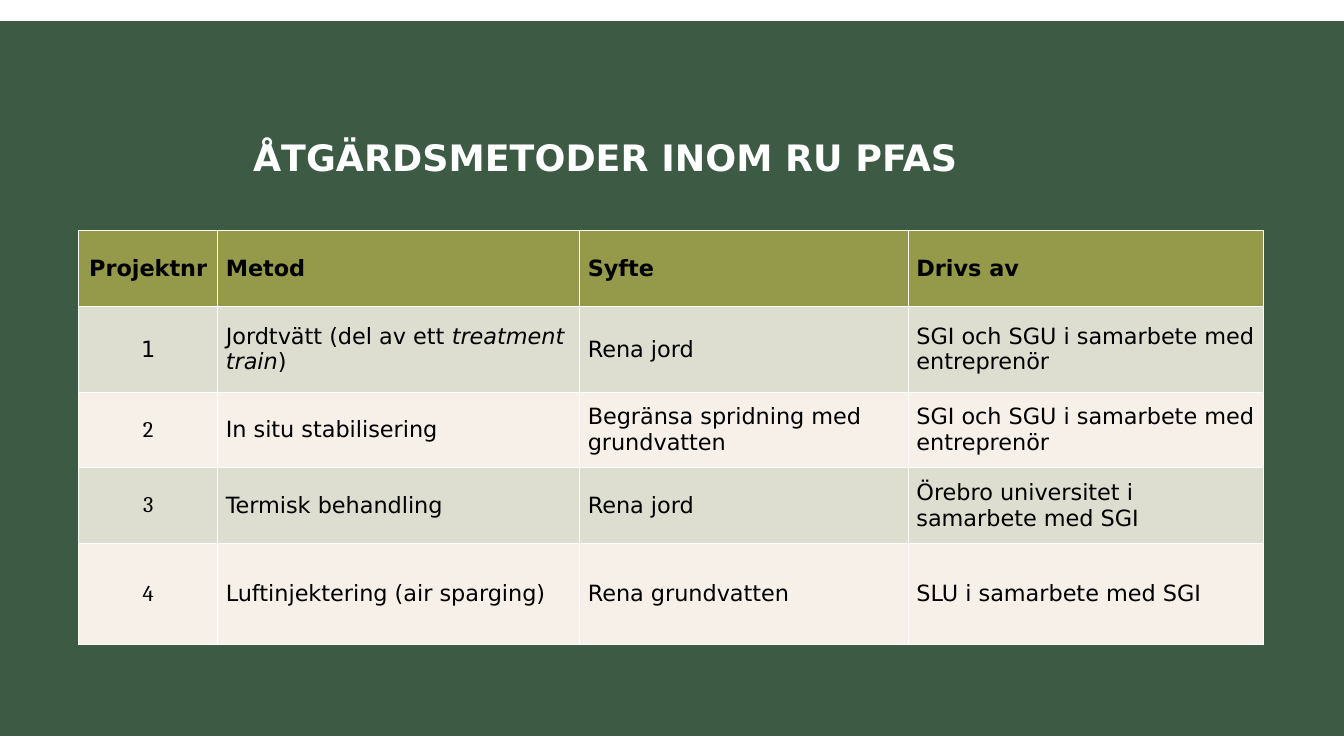
"""Build a slide with a table of PFAS remediation methods."""
import lxml.etree
import pptx
import pptx.dml.color
import pptx.enum.shapes
import pptx.enum.text
import pptx.oxml.ns
import pptx.util

Inches = pptx.util.Inches
ALIGN = pptx.enum.text.PP_ALIGN
MIDDLE = pptx.enum.text.MSO_ANCHOR.MIDDLE
SANS, NUMERAL = "DejaVu Sans", "Cambria"
GREEN, OLIVE, BANDS = "3C5A44", "959A4B", ("F7F0E8", "DDDED0")
WHITE, BLACK = "FFFFFF", "000000"


def rgb(value):
    return pptx.dml.color.RGBColor.from_string(value)


def style(font, color, **values):
    font.color.rgb = rgb(color)
    for key, value in values.items():
        setattr(font, key, value)


deck = pptx.Presentation()
deck.slide_width, deck.slide_height = Inches(13.33), Inches(7.5)
slide = deck.slides.add_slide(deck.slide_layouts[5])

panel = slide.shapes.add_shape(
    pptx.enum.shapes.MSO_SHAPE.RECTANGLE,
    0, Inches(0.21), deck.slide_width, Inches(7.09))
panel.shadow.inherit = False
panel.fill.solid()
panel.fill.fore_color.rgb = rgb(GREEN)
panel.line.fill.background()
panel.element.getparent().insert(2, panel.element)

heading = slide.shapes.title
heading_place = {"left": 2.41, "top": 1.34, "width": 8.52, "height": 0.67}
for key, value in heading_place.items():
    setattr(heading, key, Inches(value))
heading.text_frame.text = "ÅTGÄRDSMETODER INOM RU PFAS"
heading.text_frame.word_wrap = True
heading.text_frame.auto_size = pptx.enum.text.MSO_AUTO_SIZE.NONE
heading.text_frame.vertical_anchor = pptx.enum.text.MSO_ANCHOR.TOP
heading_line = heading.text_frame.paragraphs[0]
heading_line.alignment = ALIGN.LEFT
heading_line.line_spacing = 0.9
style(heading_line.runs[0].font, WHITE, name=SANS, size=pptx.util.Pt(26), bold=True)

# Asterisks mark italic words.
projects = [
    ("Projektnr", "Metod", "Syfte", "Drivs av"),
    ("1", "Jordtvätt (del av ett *treatment train*)", "Rena jord",
     "SGI och SGU i samarbete med entreprenör"),
    ("2", "In situ stabilisering", "Begränsa spridning med grundvatten",
     "SGI och SGU i samarbete med entreprenör"),
    ("3", "Termisk behandling", "Rena jord",
     "Örebro universitet i samarbete med SGI"),
    ("4", "Luftinjektering (air sparging)", "Rena grundvatten",
     "SLU i samarbete med SGI"),
]
widths = [1.38, 3.59, 3.26, 3.52]
heights = [0.75, 0.85, 0.75, 0.75, 1]

methods = slide.shapes.add_table(
    len(heights), len(widths), Inches(0.78), Inches(2.29),
    Inches(sum(widths)), Inches(sum(heights))).table
methods.horz_banding = False
for column, width in zip(methods.columns, widths):
    column.width = Inches(width)
for row, height in zip(methods.rows, heights):
    row.height = Inches(height)

cell_format = {"vertical_anchor": MIDDLE}
cell_format.update({f"margin_{side}": Inches(0.08)
                    for side in ("left", "right", "top", "bottom")})

for row, project in enumerate(projects):
    for column, wording in enumerate(project):
        cell = methods.cell(row, column)
        for key, value in cell_format.items():
            setattr(cell, key, value)

        cell_properties = cell._tc.get_or_add_tcPr()
        for edge in ("lnL", "lnR", "lnT", "lnB"):
            border = lxml.etree.SubElement(
                cell_properties, pptx.oxml.ns.qn(f"a:{edge}"), w=str(pptx.util.Pt(1)))
            ink = lxml.etree.SubElement(border, pptx.oxml.ns.qn("a:solidFill"))
            lxml.etree.SubElement(ink, pptx.oxml.ns.qn("a:srgbClr"), val=WHITE)
        cell.fill.solid()
        cell.fill.fore_color.rgb = rgb(BANDS[row % 2] if row else OLIVE)

        line = cell.text_frame.paragraphs[0]
        line.alignment = ALIGN.LEFT if column else ALIGN.CENTER
        for part, words in enumerate(wording.split("*")):
            run = line.add_run()
            run.text = words
            style(run.font, BLACK, name=NUMERAL if row > 1 and column == 0 else SANS,
                  size=pptx.util.Pt(16), bold=row == 0, italic=part % 2 == 1)

deck.save("out.pptx")
